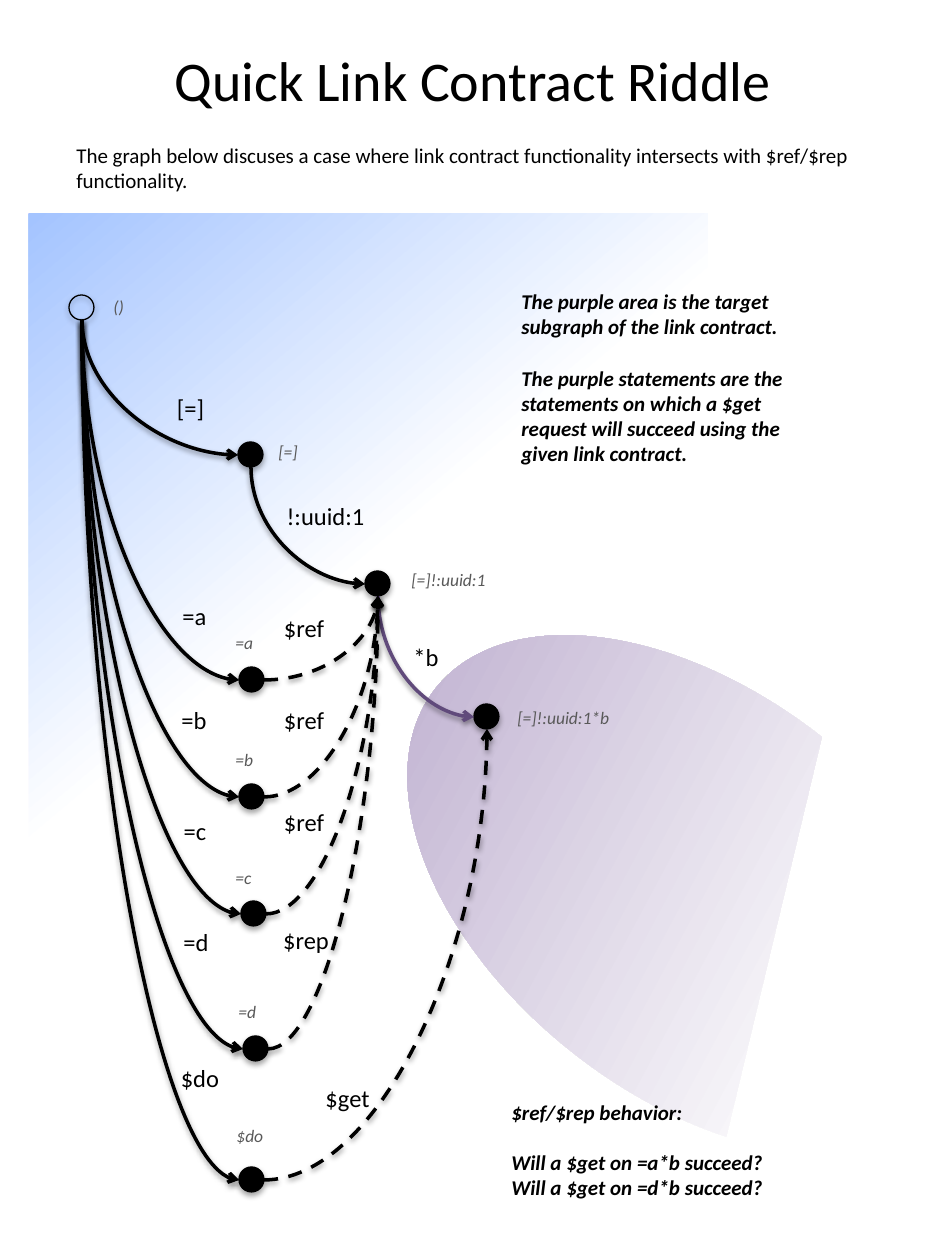
"""Build the link contract riddle slide: a graph of nodes, arrows and labels."""
import dataclasses

import pptx
import pptx.dml.color
import pptx.enum.dml
import pptx.enum.shapes
import pptx.enum.text
import pptx.oxml
import pptx.oxml.ns
import pptx.util

PX = 914400 / 126
SHAPE = pptx.enum.shapes.MSO_SHAPE
CENTER = pptx.enum.text.PP_ALIGN.CENTER
NODE = 25
MID = 13
ROOT, EQUAL, UUID, STAR_B = (69, 295), (238, 442), (365, 571), (474, 704)


@dataclasses.dataclass(frozen=True)
class Theme:
    font: str = "Calibri"
    ink: str = "000000"
    muted: str = "595959"
    white: str = "FFFFFF"
    blue: str = "A4C4FF"
    lilac: str = "B3A2C7"
    purple: str = "604A7B"
    title: int = 32
    label: int = 14
    body: int = 12
    caption: int = 10


def px(*values):
    return [pptx.util.Emu(round(v * PX)) for v in values]


def rgb(color):
    return pptx.dml.color.RGBColor.from_string(color)


def shadow_xml(alpha, dist):
    return pptx.oxml.parse_xml(
        f'<a:effectLst {pptx.oxml.ns.nsdecls("a")}><a:outerShdw blurRad="40000" dist="{dist}" '
        f'dir="5400000" rotWithShape="0"><a:srgbClr val="000000"><a:alpha val="{alpha}"/>'
        '</a:srgbClr></a:outerShdw></a:effectLst>')


class Board:
    def __init__(self, slide, theme):
        self.slide, self.theme = slide, theme

    def style(self, tf, size, color, bold=False, italic=False, align=None):
        for p in tf.paragraphs:
            p.alignment = align
            for r in p.runs:
                r.font.name, r.font.size = self.theme.font, pptx.util.Pt(size)
                r.font.bold, r.font.italic = bold, italic
                r.font.color.rgb = rgb(color)

    def title(self, text, x, y, w, h):
        sp = self.slide.shapes.title
        sp.left, sp.top, sp.width, sp.height = px(x, y, w, h)
        sp.text_frame.text = text
        self.style(sp.text_frame, self.theme.title, self.theme.ink, align=CENTER)

    def text(self, text, x, y, w, h, wrap=True, **style):
        tf = self.slide.shapes.add_textbox(*px(x, y, w, h)).text_frame
        tf.word_wrap = wrap
        tf.text = text
        self.style(tf, **style)
        return tf

    def note(self, text, x, y, w, h, strong=True):
        return self.text(text, x, y, w, h, size=self.theme.body, color=self.theme.ink,
                         bold=strong, italic=strong)

    def label(self, text, x, y, w):
        self.text(text, x, y, w, 43, wrap=False, size=self.theme.label,
                  color=self.theme.ink, align=CENTER)

    def caption(self, text, x, y, w=55):
        self.text(text, x, y, w, 40, size=self.theme.caption, color=self.theme.muted, italic=True)

    def area(self, kind, x, y, w, h, color, start, angle, rotation=0):
        sp = self.slide.shapes.add_shape(kind, *px(x, y, w, h))
        sp.shadow.inherit = False
        sp.rotation = rotation
        sp.line.fill.background()
        sp.fill.gradient()
        sp.fill.gradient_angle = angle
        stops = zip(sp.fill.gradient_stops, (start, 1), (self.theme.white, color))
        for stop, position, shade in stops:
            stop.position, stop.color.rgb = position, rgb(shade)
        return sp

    def node(self, x, y, filled=True):
        sp = self.slide.shapes.add_shape(SHAPE.OVAL, *px(x, y, NODE, NODE))
        if filled:
            sp.fill.solid()
            sp.fill.fore_color.rgb = rgb(self.theme.ink)
        else:
            sp.fill.background()
        sp.line.color.rgb = rgb(self.theme.ink)
        sp.line.width = pptx.util.Pt(0.75)
        sp._element.spPr.append(shadow_xml(35000, 23000))

    def curve(self, x1, y1, x2, y2, color, dashed=False):
        kind = pptx.enum.shapes.MSO_CONNECTOR.CURVE
        cxn = self.slide.shapes.add_connector(kind, *px(x1, y1, x2, y2))
        cxn.line.color.rgb = rgb(color)
        cxn.line.width = pptx.util.Pt(2)
        if dashed:
            cxn.line.dash_style = pptx.enum.dml.MSO_LINE.DASH
        spPr = cxn._element.spPr
        spPr.find(pptx.oxml.ns.qn("a:prstGeom")).set("prst", "curvedConnector2")
        spPr.find(pptx.oxml.ns.qn("a:ln")).append(pptx.oxml.parse_xml(
            f'<a:tailEnd {pptx.oxml.ns.nsdecls("a")} type="arrow"/>'))
        spPr.append(shadow_xml(38000, 20000))
        return cxn

    def contain(self, parent, child, color=None):
        """Arrow from under the parent to the left of the child, leaving downwards."""
        x1, y1, x2, y2 = parent[0] + MID, parent[1] + NODE, child[0], child[1] + MID
        cxn = self.curve(x1, y1, x2, y2, color or self.theme.ink)
        w, h = y2 - y1, x2 - x1
        cxn.left, cxn.top, cxn.width, cxn.height = px((x1 + x2 - w) / 2, (y1 + y2 - h) / 2, w, h)
        xfrm = cxn._element.spPr.find(pptx.oxml.ns.qn("a:xfrm"))
        xfrm.set("rot", "16200000")
        xfrm.set("flipH", "1")

    def refer(self, source, target):
        self.curve(source[0] + NODE, source[1] + MID, target[0] + MID, target[1] + NODE,
                   self.theme.ink, dashed=True)


BRANCHES = [
    ("=a", (239, 667), (170, 595, 49), (223, 626), "$ref", (271, 607, 66), UUID),
    ("=b", (239, 784), (169, 699, 50), (223, 743), "$ref", (271, 699, 66), UUID),
    ("=c", (241, 901), (171, 810, 48), (223, 861), "$ref", (271, 801, 66), UUID),
    ("=d", (243, 1036), (171, 921, 50), (226, 995), "$rep", (270, 919, 72), UUID),
    ("$do", (239, 1167), (168, 1057, 64), (224, 1119), "$get", (312, 1077, 71), STAR_B),
]


def main():
    prs = pptx.Presentation()
    prs.slide_width, prs.slide_height = px(945, 1260)
    theme = Theme()
    board = Board(prs.slides.add_slide(prs.slide_layouts[5]), theme)

    board.area(SHAPE.RECTANGLE, 29, 214, 679, 678, theme.blue, 0.49, 130)
    target = board.area(SHAPE.CHORD, 364, 694, 667, 402, theme.lilac, 0.28, 190, 38.2)
    target.adjustments[0], target.adjustments[1] = 27, 162.025

    board.title("Quick Link Contract Riddle", 48, 42, 850, 74)
    board.note("The graph below discuses a case where link contract functionality "
               "intersects with $ref/$rep functionality.", 64, 136, 819, 63, strong=False)

    board.node(*ROOT, filled=False)
    for node in (EQUAL, UUID, STAR_B):
        board.node(*node)
    board.contain(ROOT, EQUAL)
    board.contain(EQUAL, UUID)
    board.contain(UUID, STAR_B, theme.purple)
    board.label("[=]", 164, 387, 53)
    board.label("!:uuid:1", 273, 495, 105)
    board.label("*b", 387, 636, 78)
    board.caption("()", 101, 290)
    board.caption("[=]", 266, 435)
    board.caption("[=]!:uuid:1", 399, 563, 131)
    board.caption("[=]!:uuid:1*b", 505, 701, 160)

    for name, node, name_at, caption_at, link, link_at, goal in BRANCHES:
        board.contain(ROOT, node)
        board.refer(node, goal)
        board.node(*node)
        board.label(name, *name_at)
        board.caption(name, *caption_at)
        board.label(link, *link_at)

    board.note("The purple area is the target subgraph of the link contract.", 509, 282, 312, 74)
    board.note("The purple statements are the statements on which a $get request will "
               "succeed using the given link contract.", 509, 359, 312, 88)
    tf = board.note("$ref/$rep behavior:\nWill a $get on =a*b succeed?\n"
                    "Will a $get on =d*b succeed?", 499, 1093, 312, 88)
    tf.paragraphs[1].space_before = pptx.util.Pt(14.5)

    prs.save("out.pptx")


if __name__ == "__main__":
    main()
